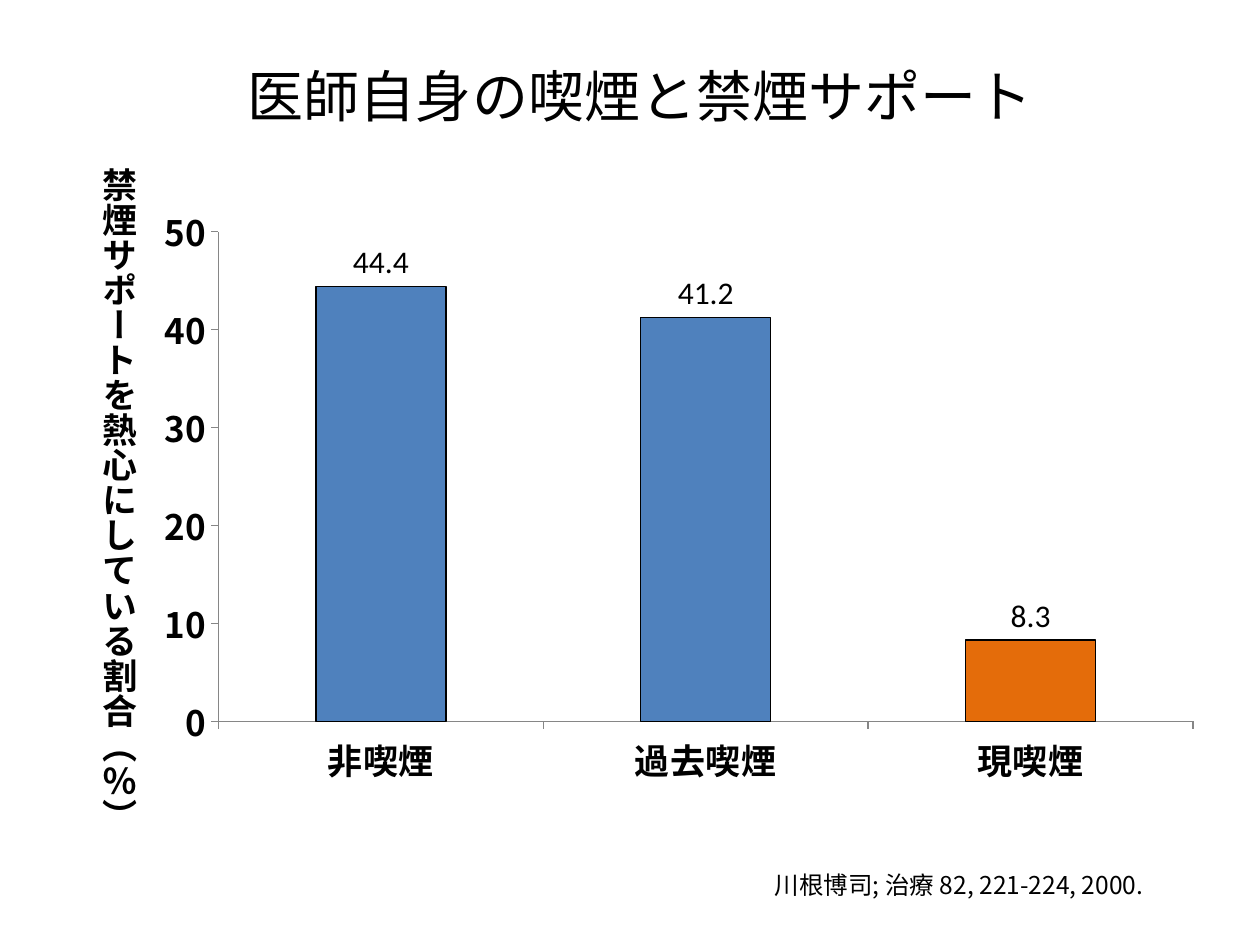
from dataclasses import dataclass
from lxml.etree import SubElement
from pptx import Presentation
from pptx.chart.data import CategoryChartData
from pptx.dml.color import RGBColor
from pptx.enum.chart import XL_CHART_TYPE, XL_LABEL_POSITION, XL_TICK_MARK
from pptx.enum.text import MSO_ANCHOR, MSO_AUTO_SIZE, PP_ALIGN
from pptx.oxml import parse_xml
from pptx.oxml.ns import nsdecls, qn
from pptx.util import Pt

SANS = "Noto Sans CJK JP"
BLACK = "000000"


@dataclass
class Box:
    left: float
    top: float
    width: float
    height: float

    def place(self) -> tuple:
        return tuple(Pt(n) for n in (self.left, self.top, self.width, self.height))


@dataclass
class Bar:
    name: str
    value: float
    color: str


def paint(target, color: str) -> None:
    target.solid()
    target.fore_color.rgb = RGBColor.from_string(color)


def style(font, size: float, bold: bool = False, face: str = SANS) -> None:
    font.size = Pt(size)
    font.bold = bold
    font.name = face
    paint(font.fill, BLACK)
    SubElement(font._rPr, qn("a:ea")).set("typeface", SANS)


def write(slide, box: Box, text: str, *, size: float, bold: bool = False,
          align=PP_ALIGN.LEFT, anchor=MSO_ANCHOR.TOP,
          wrap: bool = False, tall: bool = False) -> None:
    frame = slide.shapes.add_textbox(*box.place()).text_frame
    frame.word_wrap = wrap
    frame.auto_size = MSO_AUTO_SIZE.NONE if wrap else MSO_AUTO_SIZE.SHAPE_TO_FIT_TEXT
    frame.vertical_anchor = anchor
    if tall:
        frame._txBody.bodyPr.set("vert", "eaVert")
    para = frame.paragraphs[0]
    para.alignment = align
    run = para.add_run()
    run.text = text
    style(run.font, size, bold)


def set_area(chart, area: Box) -> None:
    parts = zip("xywh", (area.left, area.top, area.width, area.height))
    sizes = "".join(f'<c:{key} val="{val}"/>' for key, val in parts)
    layout = parse_xml(
        f'<c:layout {nsdecls("c")}><c:manualLayout><c:layoutTarget val="inner"/>'
        f'<c:xMode val="edge"/><c:yMode val="edge"/>{sizes}'
        '</c:manualLayout></c:layout>')
    plot = chart._chartSpace.chart.plotArea
    for old in plot.findall(qn("c:layout")):
        plot.remove(old)
    plot.insert(0, layout)


def draw_chart(slide, box: Box, bars: list[Bar]) -> None:
    data = CategoryChartData(number_format="General")
    data.categories = [bar.name for bar in bars]
    data.add_series("Series 1", [bar.value for bar in bars])
    chart = slide.shapes.add_chart(
        XL_CHART_TYPE.COLUMN_CLUSTERED, *box.place(), data).chart
    chart.has_legend = False
    chart.has_title = False
    style(chart.font, 18, face="Calibri")
    set_area(chart, Box(0.07, 0.06, 0.91, 0.81))

    for axis in (chart.category_axis, chart.value_axis):
        axis.has_major_gridlines = False
        axis.major_tick_mark = XL_TICK_MARK.OUTSIDE
        axis.minor_tick_mark = XL_TICK_MARK.NONE
        paint(axis.format.line.fill, "868686")
        axis.format.line.width = Pt(0.75)
        style(axis.tick_labels.font, 20, True)
    scale = chart.value_axis
    scale.minimum_scale = 0
    scale.maximum_scale = 50
    scale.major_unit = 10

    plot = chart.plots[0]
    plot.gap_width = 150
    plot.vary_by_categories = False
    plot.has_data_labels = True
    labels = plot.data_labels
    labels.show_value = True
    labels.position = XL_LABEL_POSITION.OUTSIDE_END
    style(labels.font, 18, face="Calibri")
    series = plot.series[0]
    paint(series.format.fill, bars[0].color)
    for spot, bar in enumerate(bars):
        form = series.points[spot].format
        paint(form.fill, bar.color)
        paint(form.line.fill, BLACK)
        form.line.width = Pt(0.75)


def main() -> None:
    deck = Presentation()
    deck.slide_width, deck.slide_height = Pt(720), Pt(540)
    slide = deck.slides.add_slide(deck.slide_layouts[6])
    write(slide, Box(60, 26, 612, 57), "医師自身の喫煙と禁煙サポート", size=32,
          align=PP_ALIGN.CENTER, anchor=MSO_ANCHOR.MIDDLE, wrap=True)
    draw_chart(slide, Box(82, 111.6, 612, 345.6), [
        Bar("非喫煙", 44.4, "4F81BD"),
        Bar("過去喫煙", 41.2, "4F81BD"),
        Bar("現喫煙", 8.3, "E46C0A"),
    ])
    write(slide, Box(44.6, 88.6, 38.9, 385.9),
          "禁煙サポートを熱心にしている割合（％）", size=20, bold=True, tall=True)
    write(slide, Box(435.6, 493.9, 247.7, 24.5),
          "川根博司; 治療 82, 221-224, 2000.", size=14)
    deck.save("out.pptx")


if __name__ == "__main__":
    main()
